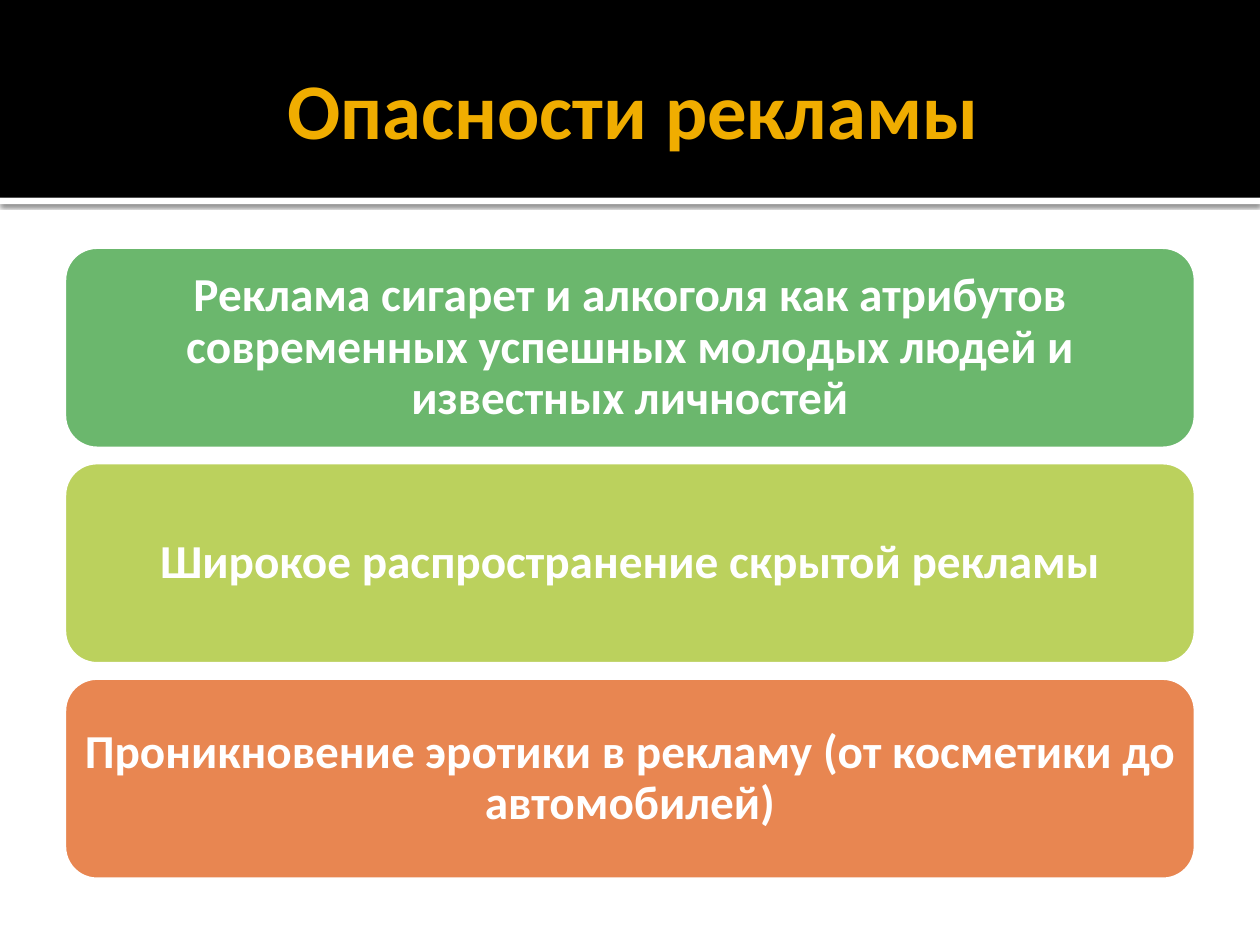
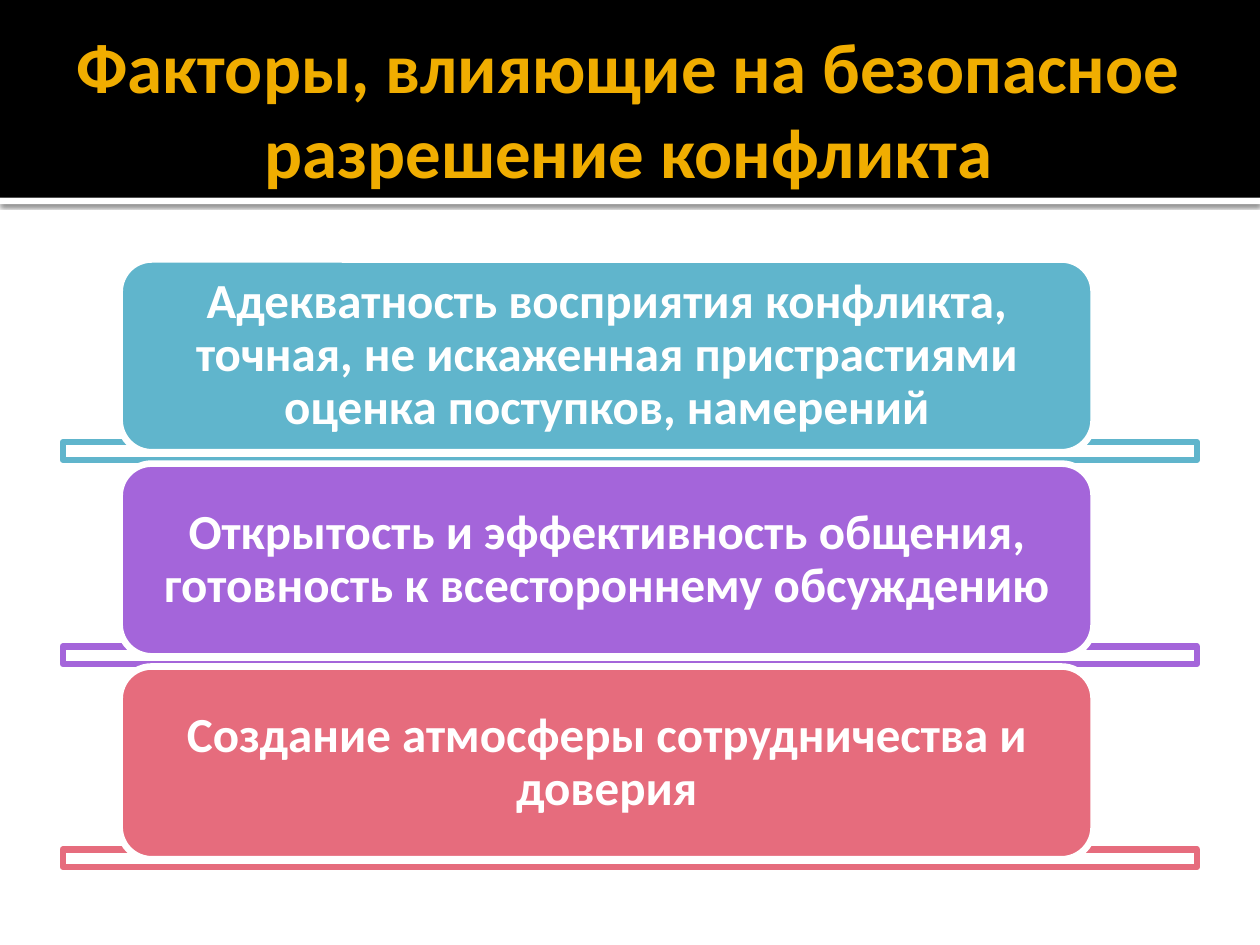
"""Build two slides of stacked coloured cards under a black title band."""
import dataclasses
import typing

import lxml.etree
import pptx
import pptx.dml.color
import pptx.enum.shapes
import pptx.enum.text
import pptx.oxml
import pptx.oxml.ns
import pptx.util

PX = 9144
FONT = "Calibri"
WHITE, BLACK, GOLD = "FFFFFF", "000000", "F0AD00"
LINE_PT = 3.78
RECT = pptx.enum.shapes.MSO_SHAPE.RECTANGLE
ROUNDED = pptx.enum.shapes.MSO_SHAPE.ROUNDED_RECTANGLE
A_NS = "http://schemas.openxmlformats.org/drawingml/2006/main"
SHADOW = (
    f'<a:effectLst xmlns:a="{A_NS}">'
    '<a:outerShdw blurRad="31750" dist="10160" dir="5400000" algn="tl" rotWithShape="0">'
    '<a:srgbClr val="000000"><a:alpha val="60000"/></a:srgbClr>'
    "</a:outerShdw></a:effectLst>"
)


class Box(typing.NamedTuple):
    x: int
    y: int
    w: int
    h: int

    def emu(self) -> list[int]:
        return [v * PX for v in self]


@dataclasses.dataclass(frozen=True)
class Card:
    text: str
    color: str


@dataclasses.dataclass(frozen=True)
class CardSlide:
    title: str
    title_box: Box
    title_size: float
    first_card: Box
    pitch: float
    text_size: float
    side_inset: int
    cards: tuple[Card, ...]
    bar: Box | None = None


SLIDES = (
    CardSlide(
        title="Опасности рекламы",
        title_box=Box(50, 17, 900, 137),
        title_size=45,
        first_card=Box(50, 195, 900, 162),
        pitch=171,
        text_size=27,
        side_inset=3,
        cards=(
            Card("Реклама сигарет и алкоголя как атрибутов современных успешных "
                 "молодых людей и известных личностей", "6BB76D"),
            Card("Широкое распространение скрытой рекламы", "BBD15D"),
            Card("Проникновение эротики в рекламу (от косметики до автомобилей)", "E88651"),
        ),
    ),
    CardSlide(
        title="Факторы, влияющие на безопасное разрешение конфликта",
        title_box=Box(20, 17, 953, 137),
        title_size=40.5,
        first_card=Box(95, 206, 773, 153),
        pitch=161.5,
        text_size=28,
        side_inset=17,
        cards=(
            Card("Адекватность восприятия конфликта, точная, не искаженная "
                 "пристрастиями оценка поступков, намерений", "60B5CC"),
            Card("Открытость и эффективность общения, готовность к всестороннему "
                 "обсуждению", "A465DA"),
            Card("Создание атмосферы сотрудничества и доверия", "E66C7D"),
        ),
        bar=Box(50, 351, 900, 14),
    ),
)


def rgb(color: str) -> pptx.dml.color.RGBColor:
    return pptx.dml.color.RGBColor.from_string(color)


def write(sp, text: str, *, size: float, color: str,
          insets: tuple[int, int, int, int], spacing: float | None = None) -> None:
    tf = sp.text_frame
    tf.word_wrap = True
    tf.auto_size = pptx.enum.text.MSO_AUTO_SIZE.NONE
    tf.vertical_anchor = pptx.enum.text.MSO_ANCHOR.MIDDLE
    tf.margin_left, tf.margin_top, tf.margin_right, tf.margin_bottom = (v * PX for v in insets)
    p = tf.paragraphs[0]
    p.alignment = pptx.enum.text.PP_ALIGN.CENTER
    p.line_spacing = spacing
    r = p.add_run()
    r.text = text
    r.font.name = FONT
    r.font.size = pptx.util.Pt(size)
    r.font.bold = True
    r.font.color.rgb = rgb(color)


def add_block(s, shape, box: Box, fill: str, line: str | None = None):
    sp = s.shapes.add_shape(shape, *box.emu())
    sp.shadow.inherit = False
    sp.fill.solid()
    sp.fill.fore_color.rgb = rgb(fill)
    if line:
        sp.line.color.rgb = rgb(line)
        sp.line.width = pptx.util.Pt(LINE_PT)
    else:
        sp.line.fill.background()
    return sp


def add_header(s, spec: CardSlide) -> None:
    strip = add_block(s, RECT, Box(0, 157, 1000, 5), WHITE)
    sp_pr = strip.element.spPr
    sp_pr.replace(sp_pr.find(pptx.oxml.ns.qn("a:effectLst")), pptx.oxml.parse_xml(SHADOW))
    add_block(s, RECT, Box(0, 0, 1000, 157), BLACK)
    title = s.shapes.title
    s.shapes.element.append(title.element)
    title.left, title.top, title.width, title.height = spec.title_box.emu()
    write(title, spec.title, size=spec.title_size, color=GOLD, insets=(10, 5, 5, 5))


def add_bar(s, box: Box, color: str) -> None:
    bar = add_block(s, RECT, box, WHITE, color)
    fill = bar.element.spPr.find(pptx.oxml.ns.qn("a:solidFill"))
    lxml.etree.SubElement(fill[0], pptx.oxml.ns.qn("a:alpha"), val="90000")


def add_cards(s, spec: CardSlide) -> None:
    for i, card in enumerate(spec.cards):
        shift = round(i * spec.pitch)
        if spec.bar:
            add_bar(s, spec.bar._replace(y=spec.bar.y + shift), card.color)
        box = spec.first_card._replace(y=spec.first_card.y + shift)
        sp = add_block(s, ROUNDED, box, card.color, WHITE)
        write(sp, card.text, size=spec.text_size, color=WHITE, spacing=0.9,
              insets=(spec.side_inset, 0, spec.side_inset, 0))


def main() -> None:
    prs = pptx.Presentation()
    prs.slide_width, prs.slide_height = 1000 * PX, 750 * PX
    for spec in SLIDES:
        s = prs.slides.add_slide(prs.slide_layouts[5])
        add_header(s, spec)
        add_cards(s, spec)
    prs.save("out.pptx")


if __name__ == "__main__":
    main()
